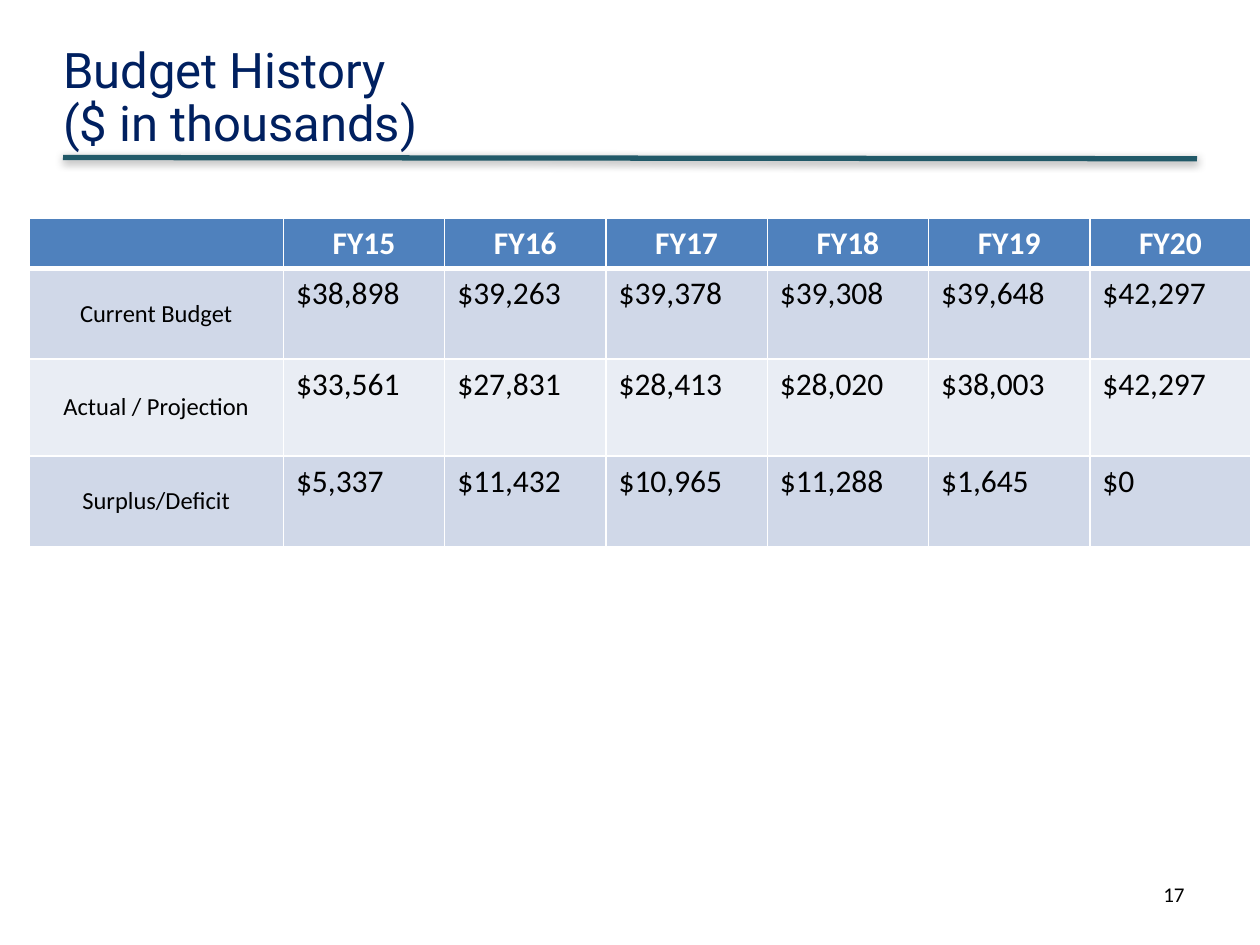
from lxml.etree import SubElement as Sub
from pptx import Presentation
from pptx.dml.color import RGBColor as RGB
from pptx.enum.shapes import MSO_CONNECTOR as Conn
from pptx.enum.text import MSO_ANCHOR as Anchor, PP_ALIGN as Align
from pptx.oxml import parse_xml
from pptx.oxml.ns import nsdecls, qn
from pptx.util import Inches as In, Pt

NAVY = RGB(0x00, 0x20, 0x60)
TEAL = RGB(0x21, 0x59, 0x68)
BLUE = RGB(0x4F, 0x81, 0xBD)
BANDS = RGB(0xD0, 0xD8, 0xE8), RGB(0xE9, 0xED, 0xF4)
WHITE = RGB(0xFF, 0xFF, 0xFF)
BLACK = RGB(0x00, 0x00, 0x00)

LEFT, RIGHT = 0.5, 9.5
COLS = [2.02] + [1.28] * 6
ROWS = [0.39, 0.72, 0.77, 0.72]
DATA = [
    ["", "FY15", "FY16", "FY17", "FY18", "FY19", "FY20"],
    ["Current Budget", "$38,898", "$39,263", "$39,378", "$39,308", "$39,648", "$42,297"],
    ["Actual / Projection", "$33,561", "$27,831", "$28,413", "$28,020", "$38,003", "$42,297"],
    ["Surplus/Deficit", "$5,337", "$11,432", "$10,965", "$11,288", "$1,645", "$0"],
]


def style(font, color, **values):
    for key, val in values.items():
        setattr(font, key, val)
    font.color.rgb = color


def add_title(slide):
    title = slide.shapes.title
    place = {"left": LEFT, "top": 0.33, "width": 6.86, "height": 0.92}
    for key, val in place.items():
        setattr(title, key, In(val))
    frame = title.text_frame
    frame.word_wrap = True
    frame.vertical_anchor = Anchor.MIDDLE
    for side in ("left", "top", "right", "bottom"):
        setattr(frame, f"margin_{side}", 0)
    par = frame.paragraphs[0]
    par.alignment, par.line_spacing = Align.LEFT, 0.9
    for num, text in enumerate(["Budget History", "($ in thousands)"]):
        if num:
            par.add_line_break()
        run = par.add_run()
        run.text = text
        style(run.font, NAVY, name="Roboto", size=Pt(28))


def add_rule(slide):
    rule = slide.shapes.add_connector(
        Conn.STRAIGHT, In(LEFT), In(1.25), In(RIGHT), In(1.26))
    rule.line.color.rgb = TEAL
    rule.line.width = Pt(3)
    # Soft shadow below the rule
    rule._element.spPr.append(parse_xml(
        f'<a:effectLst {nsdecls("a")}>'
        f'<a:outerShdw blurRad="{Pt(5)}" dist="{Pt(1.6)}" dir="5400000" rotWithShape="0">'
        '<a:srgbClr val="000000"><a:alpha val="38000"/></a:srgbClr>'
        '</a:outerShdw></a:effectLst>'))


def add_edges(cell, widths):
    props = cell._tc.get_or_add_tcPr()
    for side, width in zip("LRTB", widths):
        edge = Sub(props, qn(f"a:ln{side}"), w=str(Pt(width)))
        fill = Sub(edge, qn("a:solidFill"))
        Sub(fill, qn("a:srgbClr"), val=str(WHITE))


def fill_cell(cell, text, row, col):
    head, label = row == 0, col == 0
    # Edges come before the fill in the cell's properties
    add_edges(cell, (1, 1, 3 if row == 1 else 1, 3 if head else 1))
    cell.fill.solid()
    cell.fill.fore_color.rgb = BLUE if head else BANDS[(row - 1) % 2]
    mid = head or label
    cell.vertical_anchor = Anchor.MIDDLE if mid else Anchor.TOP
    par = cell.text_frame.paragraphs[0]
    par.text = text
    par.alignment = Align.CENTER if mid else Align.LEFT
    size = 14 if label and not head else 18
    style(par.font, WHITE if head else BLACK,
          name="Calibri", size=Pt(size), bold=head)


def add_budget(slide):
    table = slide.shapes.add_table(
        len(ROWS), len(COLS), In(0.23), In(1.73),
        In(sum(COLS)), In(sum(ROWS))).table
    for col, width in zip(table.columns, COLS):
        col.width = In(width)
    for row, height in zip(table.rows, ROWS):
        row.height = In(height)
    for row, line in enumerate(DATA):
        for col, text in enumerate(line):
            fill_cell(table.cell(row, col), text, row, col)


def add_number(slide):
    width = 2.33
    box = slide.shapes.add_textbox(In(RIGHT - width), In(6.95), In(width), In(0.4))
    box.text_frame.word_wrap = True
    par = box.text_frame.paragraphs[0]
    par.text = "17"
    par.alignment = Align.RIGHT
    style(par.font, BLACK, name="Calibri", size=Pt(12))


def main():
    prs = Presentation()
    prs.slide_width, prs.slide_height = In(10), In(7.5)
    slide = prs.slides.add_slide(prs.slide_layouts[5])
    add_rule(slide)
    add_title(slide)
    add_number(slide)
    add_budget(slide)
    prs.save("out.pptx")


if __name__ == "__main__":
    main()
